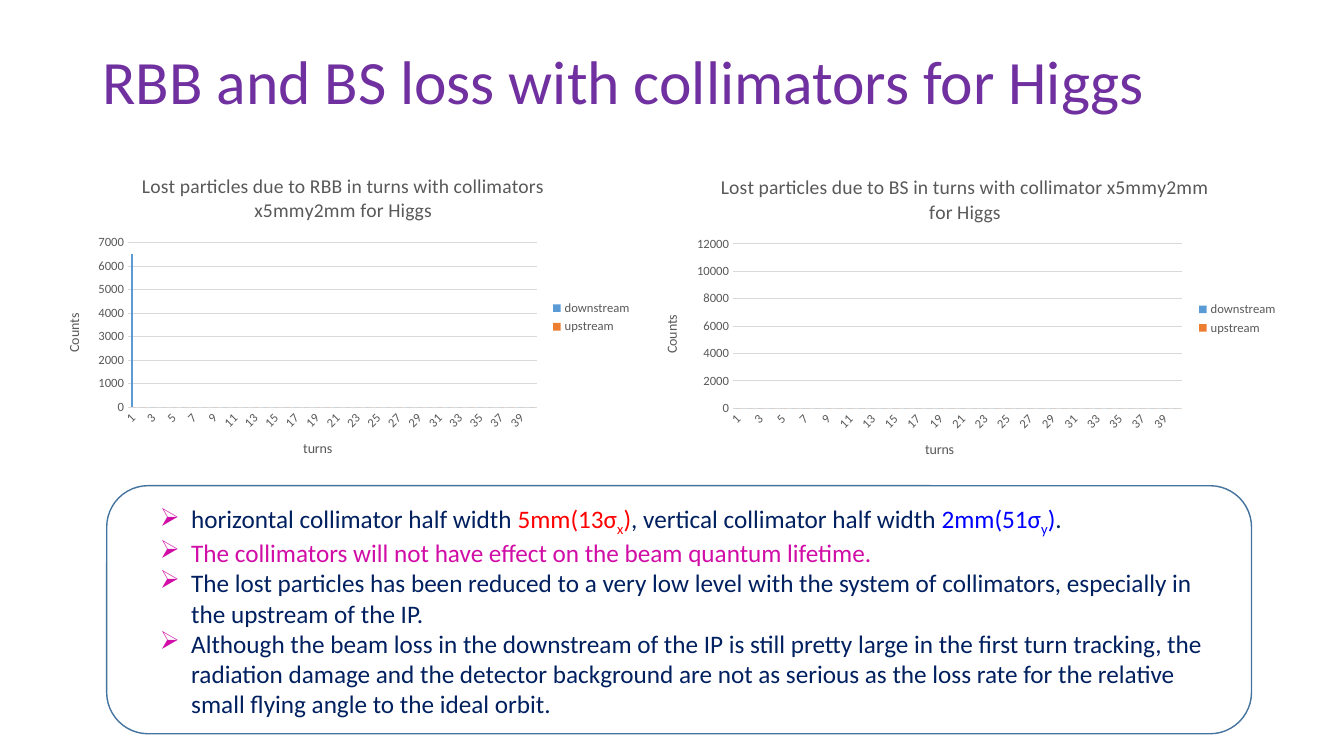
from lxml.etree import SubElement
from pptx import Presentation
from pptx.chart.data import CategoryChartData
from pptx.dml.color import RGBColor
from pptx.enum.chart import XL_CHART_TYPE, XL_LEGEND_POSITION, XL_TICK_MARK
from pptx.enum.shapes import MSO_SHAPE
from pptx.enum.text import MSO_ANCHOR
from pptx.oxml.ns import qn
from pptx.util import Cm, Pt

FONT = "Calibri"
PURPLE = RGBColor(0x70, 0x30, 0xA0)
NAVY = RGBColor(0x00, 0x20, 0x60)
RED = RGBColor(0xFF, 0x00, 0x00)
BLUE = RGBColor(0x00, 0x00, 0xFF)
MAGENTA = RGBColor(0xD1, 0x0D, 0xA7)
FRAME = RGBColor(0x43, 0x73, 0x9E)
GREY = RGBColor(0x59, 0x59, 0x59)
GRID = RGBColor(0xD9, 0xD9, 0xD9)
SERIES_COLORS = (RGBColor(0x5B, 0x9B, 0xD5), RGBColor(0xED, 0x7D, 0x31))

TURNS = 40
SUBSCRIPT = "-25000"

# Each bullet is a list of (text, colour, is_subscript)
BULLETS = [
    [("horizontal collimator half width ", NAVY, False),
     ("5mm(13σ", RED, False), ("x", RED, True), (")", RED, False),
     (", vertical collimator half width ", NAVY, False),
     ("2mm(51σ", BLUE, False), ("y", BLUE, True), (")", BLUE, False),
     (".", NAVY, False)],
    [("The collimators will not have effect on the beam quantum lifetime.",
      MAGENTA, False)],
    [("The lost particles has been reduced to a very low level with the "
      "system of collimators, especially in the upstream of the IP.",
      NAVY, False)],
    [("Although the beam loss in the downstream of the IP is still pretty "
      "large in the first turn tracking, the radiation damage and the "
      "detector background are not as serious as the loss rate for the "
      "relative small flying angle to the ideal orbit.", NAVY, False)],
]


def style_font(font, size, color):
    font.name = FONT
    font.size = Pt(size)
    font.bold = False
    font.color.rgb = color


def add_run(p, text, size, color):
    r = p.add_run()
    r.text = text
    style_font(r.font, size, color)
    return r


def add_text_frame(slide, left, top, width, height):
    tf = slide.shapes.add_textbox(left, top, width, height).text_frame
    tf.word_wrap = True
    return tf


def add_title(slide, text):
    tf = add_text_frame(slide, Cm(2.33), Cm(0.28), Cm(29.21), Cm(3.68))
    tf.vertical_anchor = MSO_ANCHOR.MIDDLE
    p = tf.paragraphs[0]
    p.line_spacing = 0.9
    add_run(p, text, 44, PURPLE)


def set_bullet(p):
    pPr = p._p.get_or_add_pPr()
    pPr.set("marL", str(Cm(0.79)))
    pPr.set("indent", str(-Cm(0.79)))
    color = SubElement(pPr, qn("a:buClr"))
    SubElement(color, qn("a:srgbClr")).set("val", str(MAGENTA))
    SubElement(pPr, qn("a:buChar")).set("char", "➢")


def add_bullets(slide, bullets):
    tf = add_text_frame(slide, Cm(3.78), Cm(12.55), Cm(26.95), Cm(5.64))
    for i, runs in enumerate(bullets):
        p = tf.add_paragraph() if i else tf.paragraphs[0]
        set_bullet(p)
        for text, color, is_subscript in runs:
            r = add_run(p, text, 18, color)
            if is_subscript:
                r.font._element.set("baseline", SUBSCRIPT)


def add_frame(slide):
    sp = slide.shapes.add_shape(MSO_SHAPE.ROUNDED_RECTANGLE,
                                Cm(2.69), Cm(12.24), Cm(28.85), Cm(6.25))
    sp.shadow.inherit = False
    sp.fill.background()
    sp.line.color.rgb = FRAME
    sp.line.width = Pt(1)


def set_heading(owner, text, size):
    """Give a chart or an axis its title."""
    p = (owner.chart_title if hasattr(owner, "chart_title")
         else owner.axis_title).text_frame.paragraphs[0]
    add_run(p, text, size, GREY)


def style_axis(axis, title):
    set_heading(axis, title, 10)
    axis.major_tick_mark = XL_TICK_MARK.NONE
    axis.minor_tick_mark = XL_TICK_MARK.NONE
    style_font(axis.tick_labels.font, 9, GREY)


def add_loss_chart(slide, title, box, first_turn, maximum, step):
    """Plot the losses per turn; only the first downstream turn may differ from 0."""
    data = CategoryChartData()
    data.categories = [str(turn) for turn in range(1, TURNS + 1)]
    data.add_series("downstream", [first_turn] + [0] * (TURNS - 1))
    data.add_series("upstream", [0] * TURNS)
    chart = slide.shapes.add_chart(
        XL_CHART_TYPE.COLUMN_CLUSTERED, *box, data).chart
    style_font(chart.font, 10, GREY)
    set_heading(chart, title, 14)

    chart.has_legend = True
    chart.legend.position = XL_LEGEND_POSITION.RIGHT
    chart.legend.include_in_layout = False
    style_font(chart.legend.font, 9, GREY)

    turns, counts = chart.category_axis, chart.value_axis
    style_axis(turns, "turns")
    turns.format.line.color.rgb = GRID
    turns.format.line.width = Pt(0.75)
    turns._element.find(qn("c:txPr")).find(qn("a:bodyPr")).set("rot", "-2700000")
    style_axis(counts, "Counts")
    counts.format.line.fill.background()
    counts.minimum_scale = 0
    counts.maximum_scale = maximum
    counts.major_unit = step
    counts.major_gridlines.format.line.color.rgb = GRID
    counts.major_gridlines.format.line.width = Pt(0.75)

    plot = chart.plots[0]
    plot.vary_by_categories = False
    plot.gap_width = 219
    plot.overlap = -27
    for series, color in zip(plot.series, SERIES_COLORS):
        series.format.fill.solid()
        series.format.fill.fore_color.rgb = color


def main():
    prs = Presentation()
    prs.slide_width, prs.slide_height = Cm(33.87), Cm(19.05)
    slide = prs.slides.add_slide(prs.slide_layouts[6])
    add_title(slide, "RBB and BS loss with collimators for Higgs")
    add_bullets(slide, BULLETS)
    add_loss_chart(
        slide,
        "Lost particles due to RBB in turns with collimators x5mmy2mm for Higgs",
        (Cm(1.12), Cm(3.96), Cm(15.06), Cm(8.08)), 6500, 7000, 1000)
    add_loss_chart(
        slide,
        "Lost particles due to BS in turns with collimator x5mmy2mm for Higgs",
        (Cm(16.18), Cm(3.99), Cm(16.28), Cm(8.08)), 0, 12000, 2000)
    add_frame(slide)
    prs.save("out.pptx")


if __name__ == "__main__":
    main()
